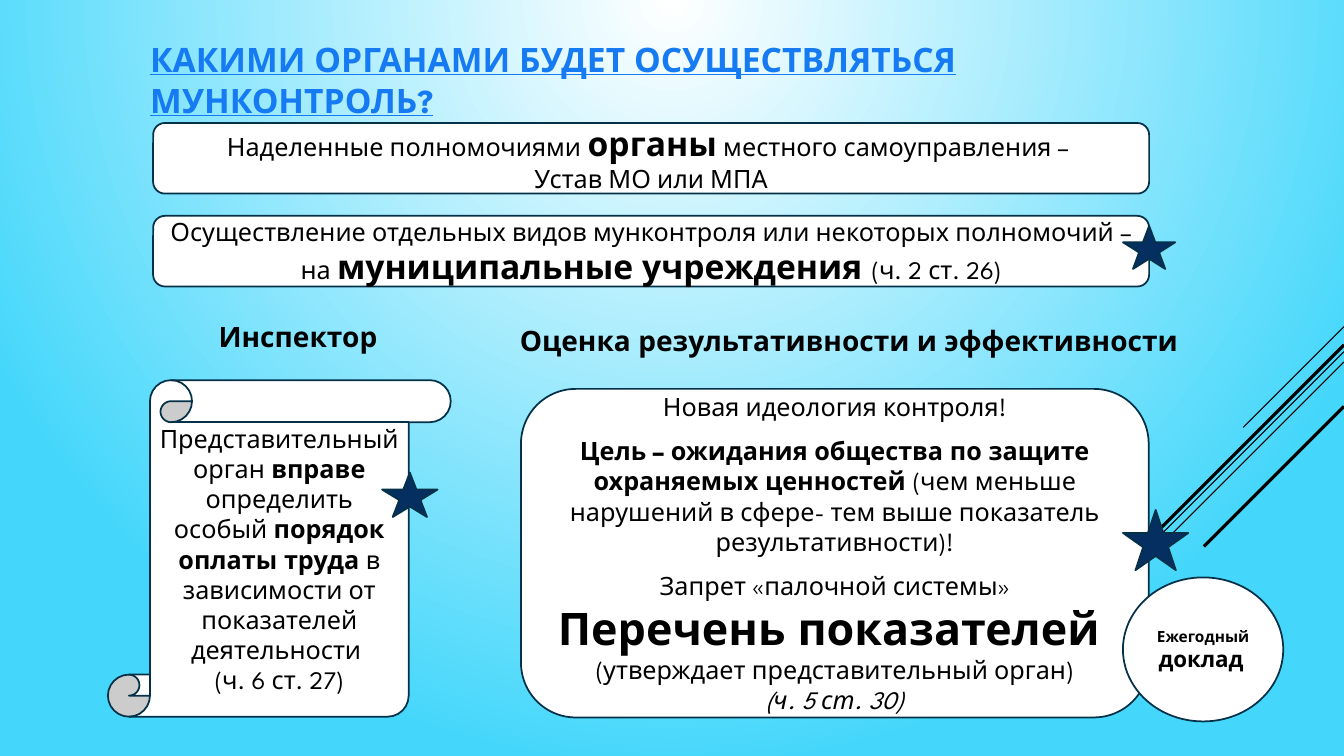
from lxml import etree
from pptx import Presentation
from pptx.dml.color import RGBColor
from pptx.enum.shapes import MSO_CONNECTOR, MSO_SHAPE
from pptx.enum.text import MSO_ANCHOR, MSO_AUTO_SIZE, PP_ALIGN
from pptx.oxml import parse_xml
from pptx.oxml.ns import qn
from pptx.util import Cm, Pt

FONT = "League Spartan"
BLACK = RGBColor(0x00, 0x00, 0x00)
WHITE = RGBColor(0xFF, 0xFF, 0xFF)
SKY = RGBColor(0x45, 0xD7, 0xFB)
BLUE = RGBColor(0x16, 0x7B, 0xF3)
NAVY = RGBColor(0x05, 0x2F, 0x61)
OUTLINE = RGBColor(0x04, 0x31, 0x48)
LEFT, CENTER = PP_ALIGN.LEFT, PP_ALIGN.CENTER
TOP, MIDDLE = MSO_ANCHOR.TOP, MSO_ANCHOR.MIDDLE
ROUNDED, SCROLL = MSO_SHAPE.ROUNDED_RECTANGLE, MSO_SHAPE.VERTICAL_SCROLL
STAR, OVAL = MSO_SHAPE.STAR_5_POINT, MSO_SHAPE.OVAL

BODY = {"size": Pt(18)}
BOLD = {"size": Pt(18), "bold": True}
ITALIC = {"size": Pt(18), "italic": True}
LARGE = {"size": Pt(24), "bold": True}
HUGE = {"size": Pt(32), "bold": True}
HEADING = {"size": Pt(20), "bold": True}
SMALL = {"size": Pt(11), "bold": True}
MEDIUM = {"size": Pt(16), "bold": True}
GAP = Pt(10)


def write(box, paragraphs, align, anchor, color=BLACK):
    """Each paragraph is (space before, [(text, format), ...])."""
    frame = box.text_frame
    frame.word_wrap = True
    frame.auto_size = MSO_AUTO_SIZE.NONE
    frame.vertical_anchor = anchor
    for number, (space, spans) in enumerate(paragraphs):
        para = frame.paragraphs[0] if number == 0 else frame.add_paragraph()
        para.alignment = align
        para.space_before = space
        for text, look in spans:
            if text == "\n":
                para.add_line_break()
                continue
            span = para.add_run()
            span.text = text
            span.font.name = FONT
            span.font.color.rgb = color
            for name, value in look.items():
                setattr(span.font, name, value)


def add_figure(kind, place, fill):
    shape = page.shapes.add_shape(kind, *map(Cm, place))
    shape.shadow.inherit = False
    shape.fill.solid()
    shape.fill.fore_color.rgb = fill
    shape.line.color.rgb = OUTLINE
    shape.line.width = Pt(1.25)
    return shape


deck = Presentation()
deck.slide_width, deck.slide_height = Cm(33.87), Cm(19.05)
page = deck.slides.add_slide(deck.slide_layouts[5])

# Background: radial glow from the top centre
glow = page.background.fill
glow.gradient()
for stop, color in zip(glow.gradient_stops, (WHITE, SKY)):
    stop.color.rgb = color
gradient = page.background._cSld.find(".//" + qn("a:gradFill"))
gradient.remove(gradient.find(qn("a:lin")))
gradient.append(parse_xml(
    '<a:path xmlns:a="http://schemas.openxmlformats.org/drawingml/2006/main" path="circle">'
    '<a:fillToRect l="0" t="0" r="0" b="100000"/></a:path>'))

# Diagonal lines at 45 degrees from the right edge: start height, run, width
for start, run, width in [(8.23, 2.54, 0.75), (8.86, 8.29, 0.75), (9.12, 5.27, 0.75),
                          (8.69, 4.85, 2.25), (10.24, 3.53, 2.25)]:
    line = page.shapes.add_connector(MSO_CONNECTOR.STRAIGHT, Cm(33.87), Cm(start),
                                     Cm(33.87 - run), Cm(start + run))
    line.line.color.rgb = BLACK
    line.line.width = Pt(width)
    etree.SubElement(line._element.spPr, qn("a:effectLst"))

# Title
title = page.shapes.title
title.left, title.top, title.width, title.height = map(Cm, (3.53, 0.86, 27.48, 1.27))
write(title, [(0, [("КАКИМИ ОРГАНАМИ БУДЕТ ОСУЩЕСТВЛЯТЬСЯ МУНКОНТРОЛЬ?",
                    {**LARGE, "underline": True})])], LEFT, TOP, BLUE)

# Headings
for place, text in [((5.26, 7.92, 5.38, 1.12), "Инспектор"),
                    ((12.85, 8.03, 17.12, 1.12), "Оценка результативности и эффективности")]:
    heading = page.shapes.add_textbox(*map(Cm, place))
    write(heading, [(0, [(text, HEADING)])], LEFT, TOP)

# Text panels
bodies = [
    (ROUNDED, (3.86, 3.1, 25.1, 1.78), [
        (0, [("Наделенные полномочиями ", BODY), ("органы", LARGE),
             (" местного самоуправления – ", BODY)]),
        (0, [("Устав МО или МПА", BODY)])]),
    (ROUNDED, (3.86, 5.44, 25.1, 1.78), [
        (0, [("Осуществление отдельных видов мунконтроля или некоторых полномочий – на ", BODY),
             ("муниципальные учреждения ", LARGE), ("(ч. 2 ст. 26)", BODY)])]),
    (SCROLL, (2.72, 9.58, 8.64, 8.48), [
        (0, [("Представительный орган ", BODY), ("вправе", BOLD),
             (" определить особый ", BODY), ("порядок оплаты труда", BOLD),
             (" в зависимости от показателей деятельности ", BODY),
             ("\n", BODY), ("(ч. 6 ст. 27)", BODY)])]),
    (ROUNDED, (13.13, 9.8, 15.82, 8.28), [
        (0, [("Новая идеология контроля!", BODY)]),
        (GAP, [("Цель – ожидания общества по защите охраняемых ценностей ", BOLD),
               ("(чем меньше нарушений в сфере- тем выше показатель результативности)!", BODY)]),
        (GAP, [("Запрет «палочной системы»", BODY)]),
        (0, [("Перечень показателей ", HUGE)]),
        (0, [("(утверждает представительный орган)", BODY)]),
        (0, [("(ч. 5 ст. 30)", ITALIC)])]),
    (OVAL, (28.3, 14.55, 4.04, 3.63), [
        (0, [("Ежегодный ", SMALL), ("доклад", MEDIUM), (" ", SMALL)])]),
]
for kind, place, paragraphs in bodies:
    panel = add_figure(kind, place, WHITE)
    write(panel, paragraphs, CENTER, MIDDLE)
    if kind == SCROLL:
        # Narrower side margins keep the longest word on one line
        panel.text_frame.margin_left = panel.text_frame.margin_right = Cm(0.2)

# Star markers
for place in [(28.3, 5.69, 1.32, 1.09), (9.63, 11.91, 1.4, 1.12), (28.3, 12.85, 1.65, 1.52)]:
    add_figure(STAR, place, NAVY)

deck.save("out.pptx")
